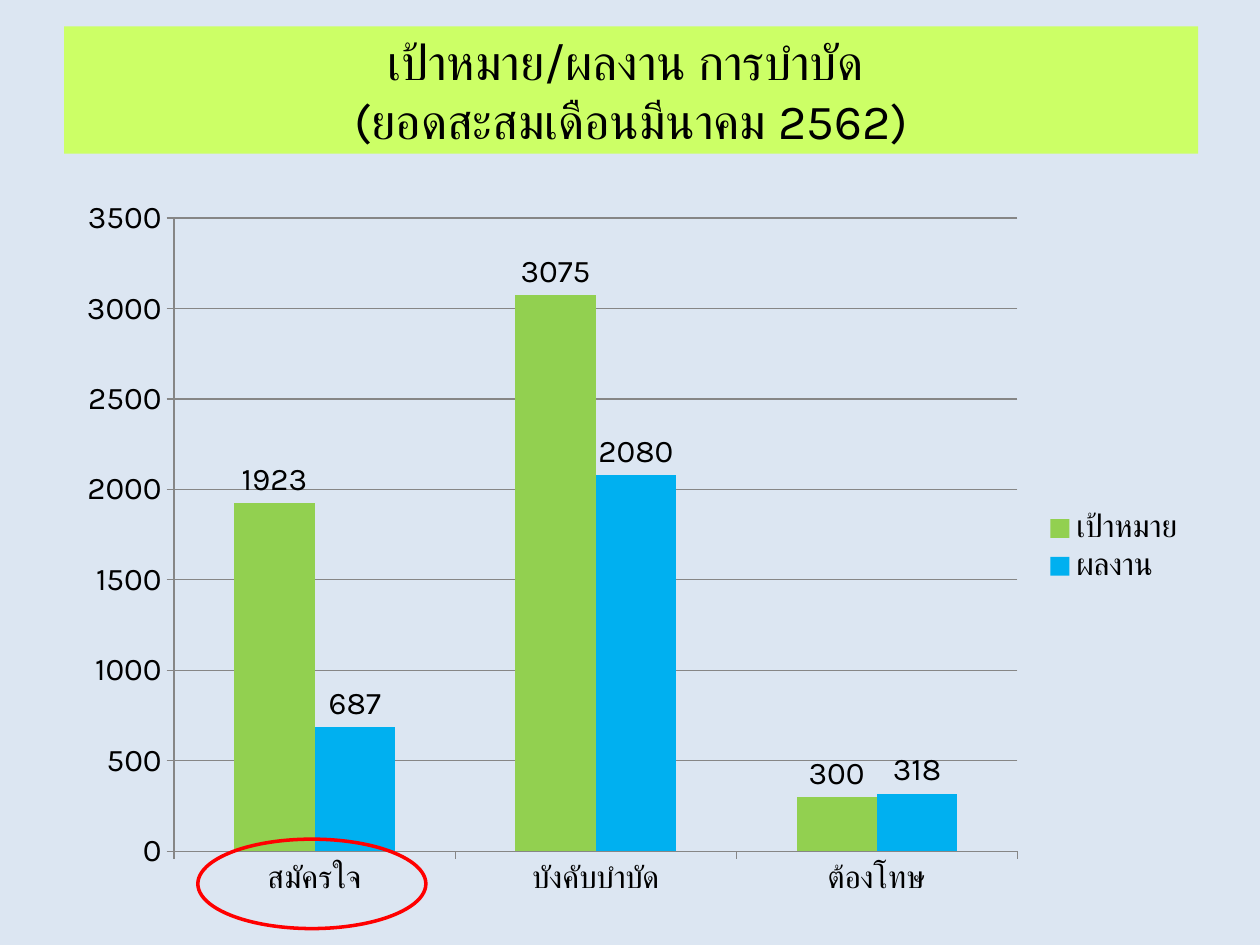
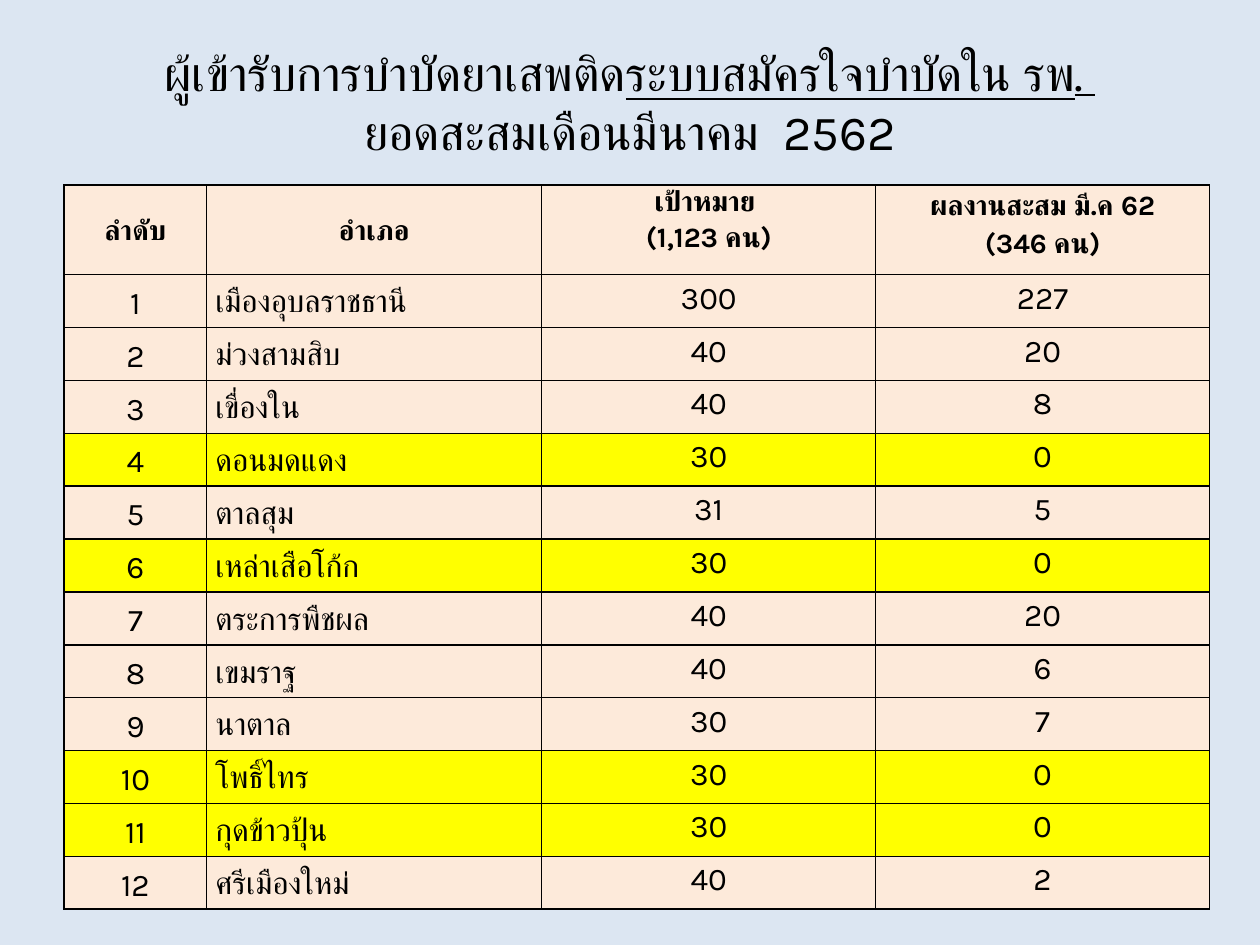
from pptx import Presentation
from pptx.chart.data import CategoryChartData as ChartData
from pptx.dml.color import RGBColor
from pptx.enum.chart import XL_CHART_TYPE as Kind, XL_LEGEND_POSITION as Legend
from pptx.enum.chart import XL_LABEL_POSITION as Label, XL_TICK_MARK as Tick
from pptx.enum.shapes import MSO_SHAPE as Shape
from pptx.enum.text import MSO_ANCHOR as Anchor, PP_ALIGN as Align
from pptx.oxml import parse_xml
from pptx.oxml.ns import nsdecls
from pptx.util import Inches, Pt

SKY = RGBColor(0xDC, 0xE6, 0xF2)
LIME = RGBColor(0xCC, 0xFF, 0x66)
GREEN = RGBColor(0x92, 0xD0, 0x50)
BLUE = RGBColor(0x00, 0xB0, 0xF0)
PEACH = RGBColor(0xFD, 0xEA, 0xDA)
YELLOW = RGBColor(0xFF, 0xFF, 0x00)
RED = RGBColor(0xFF, 0x00, 0x00)
GREY = RGBColor(0x86, 0x86, 0x86)
BLACK = RGBColor(0x00, 0x00, 0x00)

FONT = "Karla"
COLS, ROWS = 100, 75  # grid that covers the slide
BODY = (5.1, 14.7, 90, 57.5)  # area under the title

GROUPS = ["สมัครใจ", "บังคับบำบัด", "ต้องโทษ"]
SERIES = [
    ("เป้าหมาย", (1923, 3075, 300), GREEN),
    ("ผลงาน", (687, 2080, 318), BLUE),
]
HEADS = ["ลำดับ", "อำเภอ", "เป้าหมาย \n(1,123 คน)", "ผลงานสะสม มี.ค 62\n(346 คน)"]
WIDTHS = [11.3, 26.6, 26.5, 26.5]
HEAD_ROW, DATA_ROW = 7.1, 4.2
AREAS = [  # district, target, result
    ("เมืองอุบลราชธานี", 300, 227),
    ("ม่วงสามสิบ", 40, 20),
    ("เขื่องใน", 40, 8),
    ("ดอนมดแดง", 30, 0),
    ("ตาลสุม", 31, 5),
    ("เหล่าเสือโก้ก", 30, 0),
    ("ตระการพืชผล", 40, 20),
    ("เขมราฐ", 40, 6),
    ("นาตาล", 30, 7),
    ("โพธิ์ไทร", 30, 0),
    ("กุดข้าวปุ้น", 30, 0),
    ("ศรีเมืองใหม่", 40, 2),
]


class Deck:
    def __init__(self):
        self.prs = Presentation()
        self.prs.slide_width, self.prs.slide_height = Inches(10), Inches(7.5)
        self.slide = None

    def x(self, cols):
        return round(self.prs.slide_width * cols / COLS)

    def y(self, rows):
        return round(self.prs.slide_height * rows / ROWS)

    def box(self, left, top, width, height):
        return self.x(left), self.y(top), self.x(width), self.y(height)

    def style(self, font, size, bold=False):
        font.name, font.size, font.bold = FONT, Pt(size), bold
        font.color.rgb = BLACK

    def page(self):
        self.slide = self.prs.slides.add_slide(self.prs.slide_layouts[6])
        fill = self.slide.background.fill
        fill.solid()
        fill.fore_color.rgb = SKY

    def title(self, area, lines, fill=None):
        """Each line is a list of (text, underlined) pairs."""
        box = self.slide.shapes.add_textbox(*self.box(*area))
        if fill is not None:
            box.fill.solid()
            box.fill.fore_color.rgb = fill
        frame = box.text_frame
        frame.word_wrap, frame.vertical_anchor = True, Anchor.MIDDLE
        para = frame.paragraphs[0]
        para.alignment = Align.CENTER
        self.style(para.font, 28)
        for i, line in enumerate(lines):
            if i:
                para.add_line_break()
            for text, under in line:
                run = para.add_run()
                run.text = text
                self.style(run.font, 28)
                run.font.underline = under

    def ring(self, area):
        ring = self.slide.shapes.add_shape(Shape.OVAL, *self.box(*area))
        ring.shadow.inherit = False
        ring.fill.background()
        ring.line.color.rgb, ring.line.width = RED, Pt(2)

    def chart(self, area, groups, series):
        data = ChartData()
        data.categories = groups
        for name, vals, _ in series:
            data.add_series(name, vals)
        chart = self.slide.shapes.add_chart(
            Kind.COLUMN_CLUSTERED, *self.box(*area), data).chart
        self.style(chart.font, 18)
        chart.has_title = False
        chart.has_legend = True
        chart.legend.position = Legend.RIGHT
        chart.legend.include_in_layout = False

        # Axes
        scale = chart.value_axis
        scale.minimum_scale, scale.maximum_scale, scale.major_unit = 0, 3500, 500
        scale.has_major_gridlines = True
        lines = [scale.major_gridlines.format.line]
        for axis in (scale, chart.category_axis):
            axis.major_tick_mark, axis.minor_tick_mark = Tick.OUTSIDE, Tick.NONE
            lines.append(axis.format.line)
        for line in lines:
            line.color.rgb, line.width = GREY, Pt(0.75)

        # Bars and their values
        plot = chart.plots[0]
        plot.gap_width, plot.overlap, plot.vary_by_categories = 150, 0, False
        for bars, (_, _, color) in zip(plot.series, series):
            bars.format.fill.solid()
            bars.format.fill.fore_color.rgb = color
            labels = bars.data_labels
            labels.show_value, labels.position = True, Label.OUTSIDE_END
            self.style(labels.font, 18)

    def cell(self, cell, text, fill, size, bold, align, anchor):
        cell.text = text
        cell.fill.solid()
        cell.fill.fore_color.rgb = fill
        cell.vertical_anchor = anchor
        cell.margin_left = cell.margin_right = Inches(0.07)
        cell.margin_top = cell.margin_bottom = 0
        for para in cell.text_frame.paragraphs:
            para.alignment, para.line_spacing = align, 1.15
            self.style(para.font, size, bold)
            for run in para.runs:
                self.style(run.font, size, bold)
        props = cell._tc.get_or_add_tcPr()
        for i, side in enumerate(("lnL", "lnR", "lnT", "lnB")):
            props.insert(i, parse_xml(
                f'<a:{side} {nsdecls("a")} w="{Pt(1)}"><a:solidFill>'
                f'<a:srgbClr val="{BLACK}"/></a:solidFill></a:{side}>'))

    def table(self, area, heads, areas):
        grid = self.slide.shapes.add_table(
            len(areas) + 1, len(heads), *self.box(*area)).table
        for col, width in zip(grid.columns, WIDTHS):
            col.width = self.x(width)
        for i, row in enumerate(grid.rows):
            row.height = self.y(DATA_ROW if i else HEAD_ROW)
        rows = [heads] + [(i, *area) for i, area in enumerate(areas, 1)]
        for r, row in enumerate(rows):
            fill = YELLOW if row[-1] == 0 else PEACH  # no result yet
            for c, value in enumerate(row):
                align = Align.LEFT if r and c == 1 else Align.CENTER
                anchor = Anchor.MIDDLE if c < 2 else Anchor.TOP
                self.cell(grid.cell(r, c), str(value), fill,
                          18 if r else 16, not r, align, anchor)


def main():
    deck = Deck()

    # Targets and results by group
    deck.page()
    deck.title((5.1, 2.1, 90, 10.1), [
        [("เป้าหมาย/ผลงาน การบำบัด ", False)],
        [("(ยอดสะสมเดือนมีนาคม 2562)", False)],
    ], LIME)
    deck.chart(BODY, GROUPS, SERIES)
    deck.ring((15.7, 66.6, 18.1, 7.1))

    # Volunteers by district
    deck.page()
    deck.title((5, 3, 90, 10.1), [
        [("ผู้เข้ารับการบำบัดยาเสพติด", False), ("ระบบสมัครใจบำบัดใน รพ. ", True)],
        [("ยอดสะสมเดือนมีนาคม  2562", False)],
    ])
    deck.table(BODY, HEADS, AREAS)

    deck.prs.save("out.pptx")


if __name__ == "__main__":
    main()
